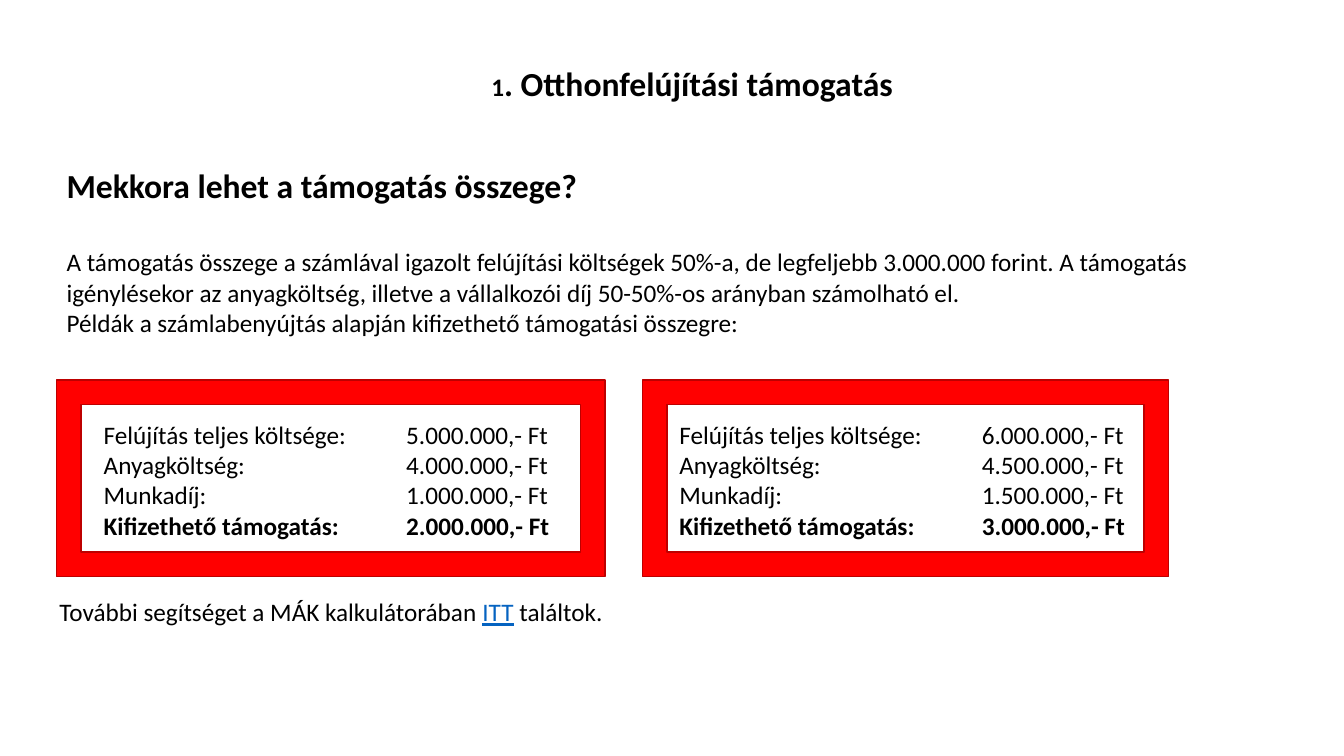
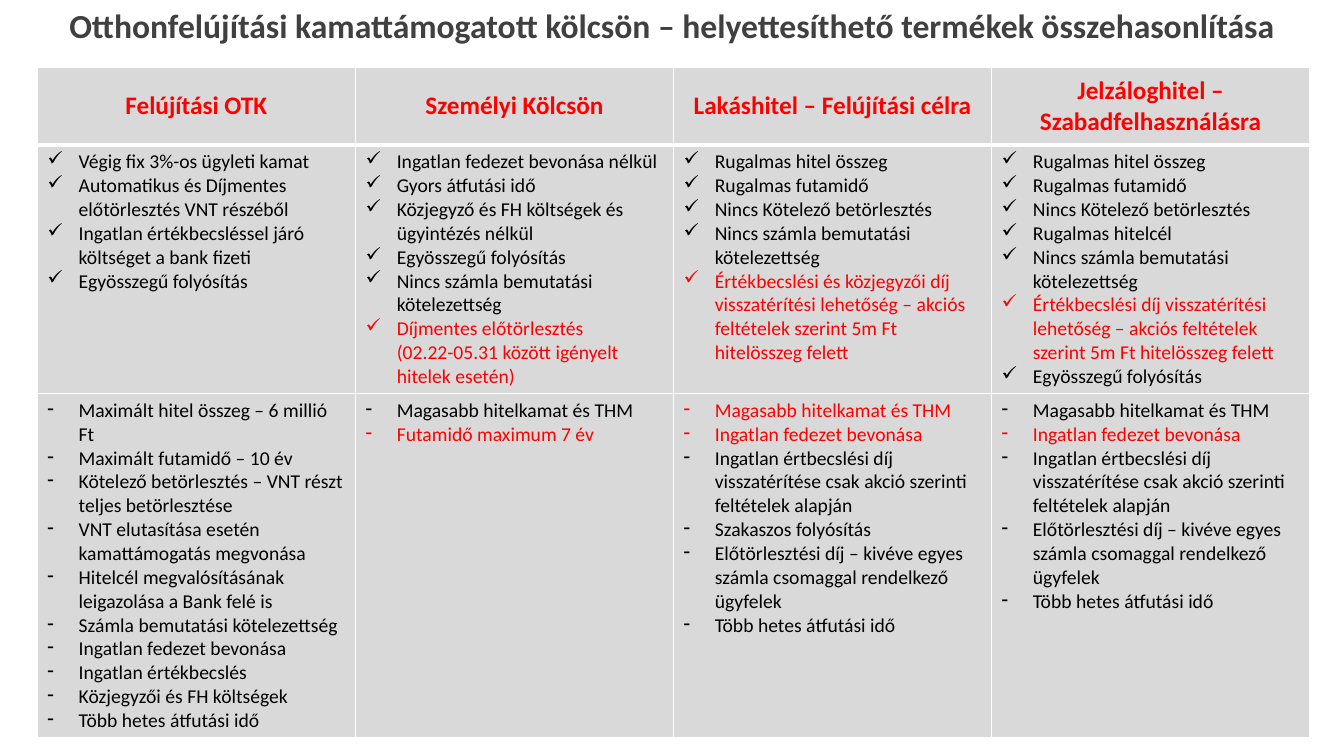
"""Builds two slides on home renovation support and comparable loans."""
from dataclasses import dataclass

from lxml import etree
from pptx import Presentation
from pptx.dml.color import RGBColor
from pptx.enum.shapes import MSO_SHAPE
from pptx.enum.text import MSO_ANCHOR, MSO_AUTO_SIZE, PP_ALIGN
from pptx.oxml.ns import qn
from pptx.util import Inches, Pt

FRAME = MSO_SHAPE.FRAME
TOP, MIDDLE = MSO_ANCHOR.TOP, MSO_ANCHOR.MIDDLE
NO_FIT = MSO_AUTO_SIZE.NONE
LEFT, CENTER = PP_ALIGN.LEFT, PP_ALIGN.CENTER


@dataclass(frozen=True)
class Theme:
    font: str = "Calibri"
    black: str = "000000"
    gray: str = "404040"
    red: str = "FF0000"
    dark_red: str = "BD0000"
    link: str = "0563C1"
    cell: str = "D9D9D9"
    white: str = "FFFFFF"
    title: int = 24
    body: int = 18
    table: int = 14


THEME = Theme()
LINE_HEIGHT = 1.22
RED_MARK = "*"

deck = Presentation()
deck.slide_width, deck.slide_height = Inches(13.33), Inches(7.5)
COLUMN, ROW = deck.slide_width / 100, deck.slide_height / 100


def place(box, left, top, width, height):
    """Sets a box on the 100 by 100 grid, with wrapped text at its top."""
    box.left, box.top = int(left * COLUMN), int(top * ROW)
    box.width, box.height = int(width * COLUMN), int(height * ROW)
    frame = box.text_frame
    frame.word_wrap, frame.auto_size, frame.vertical_anchor = True, NO_FIT, TOP
    return frame


def style(para, size, color=THEME.black, bold=False, align=LEFT):
    """Formats a paragraph and all its runs."""
    para.alignment = align
    para.space_before = Pt(0)
    for span in para.runs:
        span.font.name, span.font.size, span.font.bold = THEME.font, Pt(size), bold
        span.font.color.rgb = RGBColor.from_string(color)


page = deck.slides.add_slide(deck.slide_layouts[1])
para = place(page.shapes.title, 4.2, 7.6, 94.6, 6.67).paragraphs[0]
for text in ("1", ". Otthonfelújítási támogatás"):
    para.add_run().text = text
style(para, THEME.title, bold=True, align=CENTER)
para.runs[0].font.size = Pt(THEME.body)

body = place(page.placeholders[1], 4.2, 21.2, 94.6, 24.4)
body.text = "\n".join([
    "Mekkora lehet a támogatás összege?",
    "A támogatás összege a számlával igazolt felújítási költségek 50%-a, de legfeljebb "
    "3.000.000 forint. A támogatás igénylésekor az anyagköltség, illetve a vállalkozói "
    "díj 50-50%-os arányban számolható el.",
    "Példák a számlabenyújtás alapján kifizethető támogatási összegre:",
])
for index, para in enumerate(body.paragraphs):
    properties = para._p.get_or_add_pPr()
    properties.set("marL", "0")
    properties.set("indent", "0")
    etree.SubElement(properties, qn("a:buNone"))
    heading = index == 0
    style(para, THEME.title if heading else THEME.body, bold=heading)
body.paragraphs[1].space_before = Pt(THEME.title * LINE_HEIGHT)

COST_LABELS = ["Felújítás teljes költsége:", "Anyagköltség:", "Munkadíj:",
               "Kifizethető támogatás:"]
EXAMPLES = [
    (4.2, 40.81, 6.98, 35.26, ["5.000.000", "4.000.000", "1.000.000", "2.000.000"]),
    (47.79, 39.16, 49.81, 37.36, ["6.000.000", "4.500.000", "1.500.000", "3.000.000"]),
]
for frame_left, frame_width, text_left, text_width, amounts in EXAMPLES:
    group = page.shapes.add_group_shape()
    border = group.shapes.add_shape(FRAME, 0, 0, 0, 0)
    place(border, frame_left, 50.27, frame_width, 26)
    border.shadow.inherit = False
    border.fill.solid()
    border.fill.fore_color.rgb = RGBColor.from_string(THEME.red)
    border.line.color.rgb = RGBColor.from_string(THEME.dark_red)
    border.line.width = Pt(1)
    costs = place(group.shapes.add_textbox(0, 0, 0, 0), text_left, 54.8, text_width, 17.47)
    costs.text = "\n".join(
        f"{label}\t{amount},- Ft" for label, amount in zip(COST_LABELS, amounts))
    for label, para in zip(COST_LABELS, costs.paragraphs):
        tabs = etree.SubElement(para._p.get_or_add_pPr(), qn("a:tabLst"))
        etree.SubElement(tabs, qn("a:tab"), pos=str(Inches(3)), algn="l")
        style(para, THEME.body, bold=label == COST_LABELS[-1])

para = place(page.shapes.add_textbox(0, 0, 0, 0), 3.68, 78.27, 94.6, 5.33).paragraphs[0]
for text in ("További segítséget a MÁK kalkulátorában ", "ITT", " találtok."):
    para.add_run().text = text
style(para, THEME.body)
here = para.runs[1].font
here.underline = True
here.color.rgb = RGBColor.from_string(THEME.link)

PRODUCTS = [
    ("Felújítási OTK", [
        "Végig fix 3%-os ügyleti kamat",
        "Automatikus és Díjmentes előtörlesztés VNT részéből",
        "Ingatlan értékbecsléssel járó költséget a bank fizeti",
        "Egyösszegű folyósítás",
    ], [
        "Maximált hitel összeg – 6 millió Ft",
        "Maximált futamidő – 10 év",
        "Kötelező betörlesztés – VNT részt teljes betörlesztése",
        "VNT elutasítása esetén kamattámogatás megvonása",
        "Hitelcél megvalósításának leigazolása a Bank felé is",
        "Számla bemutatási kötelezettség",
        "Ingatlan fedezet bevonása",
        "Ingatlan értékbecslés",
        "Közjegyzői és FH költségek",
        "Több hetes átfutási idő",
    ]),
    ("Személyi Kölcsön", [
        "Ingatlan fedezet bevonása nélkül",
        "Gyors átfutási idő",
        "Közjegyző és FH költségek és ügyintézés nélkül",
        "Egyösszegű folyósítás",
        "Nincs számla bemutatási kötelezettség",
        "*Díjmentes előtörlesztés\v(02.22-05.31 között igényelt hitelek esetén)",
    ], [
        "Magasabb hitelkamat és THM",
        "*Futamidő maximum 7 év",
    ]),
    ("Lakáshitel – Felújítási célra", [
        "Rugalmas hitel összeg",
        "Rugalmas futamidő",
        "Nincs Kötelező betörlesztés",
        "Nincs számla bemutatási kötelezettség",
        "*Értékbecslési és közjegyzői díj visszatérítési lehetőség – akciós feltételek "
        "szerint 5m Ft hitelösszeg felett",
    ], [
        "*Magasabb hitelkamat és THM",
        "*Ingatlan fedezet bevonása",
        "Ingatlan értbecslési díj visszatérítése csak akció szerinti feltételek alapján",
        "Szakaszos folyósítás",
        "Előtörlesztési díj – kivéve egyes számla csomaggal rendelkező ügyfelek",
        "Több hetes átfutási idő",
    ]),
    ("Jelzáloghitel – Szabadfelhasználásra", [
        "Rugalmas hitel összeg",
        "Rugalmas futamidő",
        "Nincs Kötelező betörlesztés",
        "Rugalmas hitelcél",
        "Nincs számla bemutatási kötelezettség",
        "*Értékbecslési díj visszatérítési lehetőség – akciós feltételek szerint 5m Ft "
        "hitelösszeg felett",
        "Egyösszegű folyósítás",
    ], [
        "Magasabb hitelkamat és THM",
        "*Ingatlan fedezet bevonása",
        "Ingatlan értbecslési díj visszatérítése csak akció szerinti feltételek alapján",
        "Előtörlesztési díj – kivéve egyes számla csomaggal rendelkező ügyfelek",
        "Több hetes átfutási idő",
    ]),
]
BULLETS = [None, "✓", "-"]
ROW_HEIGHTS = [10.27, 32.27, 45.07]

page = deck.slides.add_slide(deck.slide_layouts[5])
title = place(page.shapes.title, 0, 0, 100, 6.67)
title.text = "Otthonfelújítási kamattámogatott kölcsön – helyettesíthető termékek összehasonlítása"
style(title.paragraphs[0], THEME.title, THEME.gray, True, CENTER)

table = page.shapes.add_table(
    len(ROW_HEIGHTS), len(PRODUCTS), int(2.78 * COLUMN), int(8.93 * ROW),
    int(94.67 * COLUMN), int(sum(ROW_HEIGHTS) * ROW)).table
for table_row, height in zip(table.rows, ROW_HEIGHTS):
    table_row.height = int(height * ROW)

for column, (name, benefits, drawbacks) in enumerate(PRODUCTS):
    for row, entries in enumerate(([name], benefits, drawbacks)):
        cell = table.cell(row, column)
        cell.text_frame.text = "\n".join(entry.removeprefix(RED_MARK) for entry in entries)
        thick_side = {0: "lnB", 1: "lnT"}.get(row)
        for side in ("lnL", "lnR", "lnT", "lnB"):
            width = Pt(3 if side == thick_side else 1)
            line = etree.SubElement(
                cell._tc.get_or_add_tcPr(), qn(f"a:{side}"), w=str(width))
            fill = etree.SubElement(line, qn("a:solidFill"))
            etree.SubElement(fill, qn("a:srgbClr"), val=THEME.white)
        cell.fill.solid()
        cell.fill.fore_color.rgb = RGBColor.from_string(THEME.cell)
        if row == 0:
            cell.vertical_anchor = MIDDLE
            style(cell.text_frame.paragraphs[0], THEME.body, THEME.red, True, CENTER)
            continue
        for entry, para in zip(entries, cell.text_frame.paragraphs):
            properties = para._p.get_or_add_pPr()
            properties.set("marL", str(Inches(0.31)))
            properties.set("indent", str(-Inches(0.31)))
            etree.SubElement(properties, qn("a:buChar"), char=BULLETS[row])
            style(para, THEME.table, THEME.red if entry.startswith(RED_MARK) else THEME.black)

deck.save("out.pptx")
